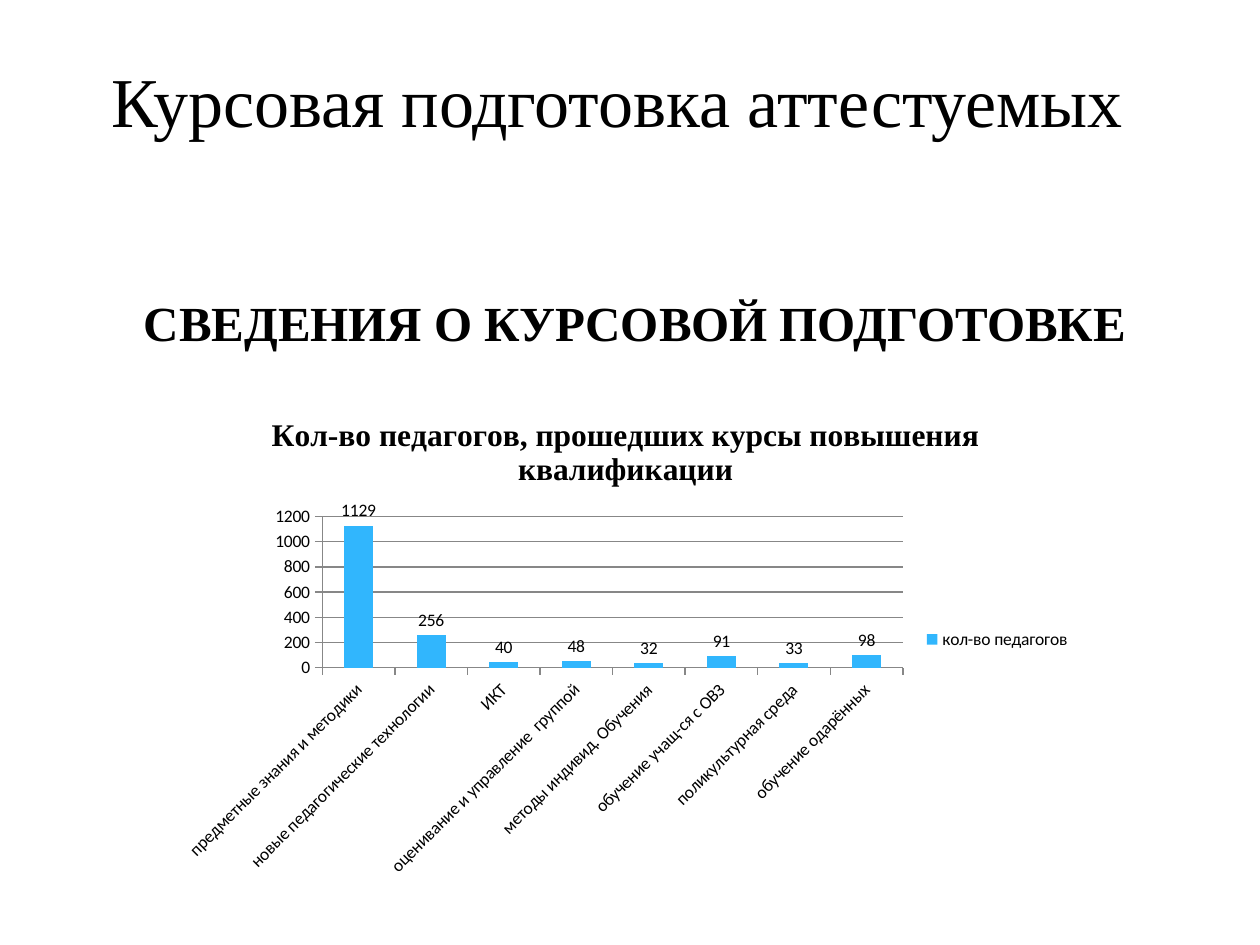
from pptx import Presentation
from pptx.chart.data import CategoryChartData
from pptx.dml.color import RGBColor
from pptx.enum.chart import XL_CHART_TYPE, XL_LABEL_POSITION, XL_LEGEND_POSITION, XL_TICK_MARK
from pptx.enum.text import MSO_ANCHOR, PP_ALIGN
from pptx.util import Inches, Pt

COLUMNS = XL_CHART_TYPE.COLUMN_CLUSTERED
OUTSIDE_END = XL_LABEL_POSITION.OUTSIDE_END
LEGEND_RIGHT = XL_LEGEND_POSITION.RIGHT
TICK_OUTSIDE = XL_TICK_MARK.OUTSIDE
TOP, BOTTOM = MSO_ANCHOR.TOP, MSO_ANCHOR.BOTTOM
LEFT, CENTER = PP_ALIGN.LEFT, PP_ALIGN.CENTER

COLORS = {"text": "000000", "bar": "31B6FD", "line": "878787"}
SERIF, SANS = "Times New Roman", "Calibri"

# Boxes in inches: left, top, width, height
HEADING_BOX = (0.79, 0.23, 8.5, 0.94)
SUBTITLE_BOX = (0.79, 2.27, 8.5, 0.7)
CHART_BOX = (1.33, 3.12, 7.27, 3.91)

COURSES = {
    "предметные знания и методики": 1129,
    "новые педагогические технологии": 256,
    "ИКТ": 40,
    "оценивание и управление  группой": 48,
    "методы индивид. Обучения": 32,
    "обучение учащ-ся с ОВЗ": 91,
    "поликультурная среда": 33,
    "обучение одарённых": 98,
}


def color(name):
    return RGBColor.from_string(COLORS[name])


def set_font(font, name, size, bold=False):
    font.name, font.size, font.bold = name, Pt(size), bold
    font.color.rgb = color("text")


def add_text(slide, box, text, size, bold, align, anchor):
    tf = slide.shapes.add_textbox(*map(Inches, box)).text_frame
    tf.word_wrap = True
    tf.vertical_anchor = anchor
    p = tf.paragraphs[0]
    p.text = text
    p.alignment = align
    set_font(p.font, SERIF, size, bold)


def add_course_chart(slide, box):
    data = CategoryChartData()
    data.categories = list(COURSES)
    data.add_series("кол-во педагогов", list(COURSES.values()))
    chart = slide.shapes.add_chart(COLUMNS, *map(Inches, box), data).chart
    set_font(chart.font, SANS, 10)

    # Title and legend
    chart.has_title = True
    p = chart.chart_title.text_frame.paragraphs[0]
    p.text = "Кол-во педагогов, прошедших курсы повышения квалификации"
    set_font(p.font, SERIF, 18, True)
    chart.has_legend = True
    chart.legend.position = LEGEND_RIGHT
    chart.legend.include_in_layout = False

    # Columns and values
    plot = chart.plots[0]
    plot.vary_by_categories = False
    plot.gap_width = 150
    fill = plot.series[0].format.fill
    fill.solid()
    fill.fore_color.rgb = color("bar")
    plot.has_data_labels = True
    labels = plot.data_labels
    labels.show_value = True
    labels.position = OUTSIDE_END

    # Axes
    for axis in (chart.category_axis, chart.value_axis):
        axis.major_tick_mark = TICK_OUTSIDE
        axis.format.line.color.rgb = color("line")
    values = chart.value_axis
    values.has_major_gridlines = True
    values.major_gridlines.format.line.color.rgb = color("line")


def main():
    prs = Presentation()
    prs.slide_width, prs.slide_height = Inches(10), Inches(7.5)
    slide = prs.slides.add_slide(prs.slide_layouts[6])
    add_text(slide, SUBTITLE_BOX, "СВЕДЕНИЯ О КУРСОВОЙ ПОДГОТОВКЕ", 28, True, CENTER, TOP)
    add_text(slide, HEADING_BOX, "Курсовая подготовка аттестуемых", 40, False, LEFT, BOTTOM)
    add_course_chart(slide, CHART_BOX)
    prs.save("out.pptx")


if __name__ == "__main__":
    main()
